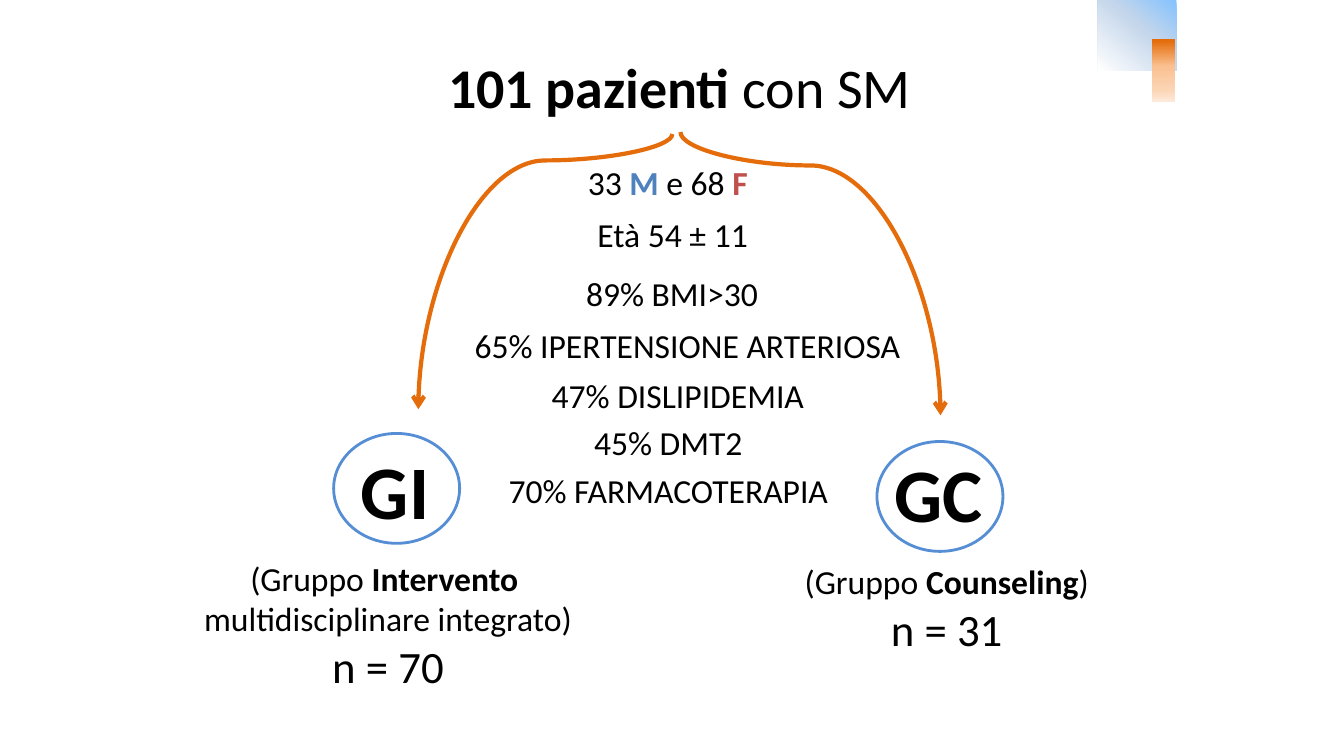
"""Build the slide that splits 101 patients into two study groups."""
from dataclasses import dataclass

import pptx
import pptx.dml.color
import pptx.enum.shapes
import pptx.enum.text
import pptx.oxml
import pptx.oxml.ns
import pptx.util
from pptx.util import Pt

FONT = "Calibri"
BLACK, ORANGE, CIRCLE_BLUE = "000000", "E46C0A", "558ED5"
MALE_BLUE, FEMALE_RED = "4F81BD", "C0504D"
SHAPES = pptx.enum.shapes.MSO_SHAPE


@dataclass
class Run:
    text: str
    bold: bool = False
    color: str = BLACK


@dataclass
class Line:
    runs: list[Run]
    size: float = 24
    indent: float = 0
    space_before: float = 0


@dataclass
class TextBlock:
    left: float
    top: float
    width: float
    height: float
    lines: list[Line]


@dataclass
class GradientPatch:
    left: float
    top: float
    width: float
    height: float
    angle: int
    stops: list[tuple[int, str]]


@dataclass
class Branch:
    start: tuple[float, float]
    end: tuple[float, float]
    bend: float


def fact(left: float, top: float, width: float, *runs: Run) -> TextBlock:
    return TextBlock(left, top, width, 36.72, [Line(list(runs))])


def heading(name: str) -> Line:
    return Line([Run(name, True)], 54, indent=10)


TITLE = TextBlock(305.28, 33.84, 360, 55.44,
                  [Line([Run("101 pazienti ", True), Run("con SM")], 40)])
COUNSELING_GROUP = TextBlock(491.04, 315.36, 348.48, 157.68, [
    heading("GC"),
    Line([Run("(Gruppo "), Run("Counseling", True), Run(")")], indent=22, space_before=17),
    Line([Run("n = 31")], 32, indent=22),
])
INTERVENTION_GROUP = TextBlock(102.96, 313.2, 348.48, 186.48, [
    heading("GI"),
    Line([Run("(Gruppo "), Run("Intervento ", True)], space_before=17),
    Line([Run("multidisciplinare integrato)")]),
    Line([Run("n = 70")], 32),
])
FACTS = [
    fact(401.04, 112.32, 151.92, Run("33 "), Run("M", True, MALE_BLUE),
         Run(" e 68 "), Run("F", True, FEMALE_RED)),
    fact(390.24, 149.04, 185.76, Run("Età 54 ± 11 ")),
    fact(322.56, 191.52, 309.6, Run(" 89% BMI>30")),
    fact(311.04, 228.24, 360, Run("65% IPERTENSIONE ARTERIOSA")),
    fact(354.96, 264.24, 258.48, Run("47% DISLIPIDEMIA")),
    fact(362.16, 298.08, 230.4, Run("45% DMT2")),
    fact(350.64, 331.92, 253.44, Run("70% FARMACOTERAPIA")),
]
CIRCLES = [(626.4, 315.36), (238.32, 309.6)]
PATCHES = [
    GradientPatch(784.08, 0, 56.16, 50.4, 130,
                  [(0, "5E9EFF"), (0, "85C2FF"), (41, "C4D6EB"), (100, "FFFFFF")]),
    GradientPatch(822.96, 28.08, 16.56, 44.64, 90,
                  [(2, ORANGE), (43, "FAC090"), (81, "FCD5B5"), (100, "FDEADA")]),
]
BRANCHES = [
    Branch((480.24, 95.76), (298.8, 292.32), 0.096),
    Branch((486, 94.32), (671.76, 296.64), 0.118),
]


def rgb(color: str) -> pptx.dml.color.RGBColor:
    return pptx.dml.color.RGBColor.from_string(color)


def xml(markup: str):
    return pptx.oxml.parse_xml(markup.replace(">", f" {pptx.oxml.ns.nsdecls('a')}>", 1))


def write_text(shape, block: TextBlock) -> None:
    shape.left, shape.top = Pt(block.left), Pt(block.top)
    shape.width, shape.height = Pt(block.width), Pt(block.height)
    frame = shape.text_frame
    frame.word_wrap = True
    frame.auto_size = pptx.enum.text.MSO_AUTO_SIZE.SHAPE_TO_FIT_TEXT
    frame.vertical_anchor = pptx.enum.text.MSO_ANCHOR.TOP
    for index, line in enumerate(block.lines):
        paragraph = frame.add_paragraph() if index else frame.paragraphs[0]
        paragraph.alignment = pptx.enum.text.PP_ALIGN.CENTER
        if line.space_before:
            paragraph.space_before = Pt(line.space_before)
        if line.indent:
            paragraph._p.get_or_add_pPr().set("marL", str(Pt(line.indent)))
        for part in line.runs:
            run = paragraph.add_run()
            run.text = part.text
            run.font.name, run.font.size = FONT, Pt(line.size)
            run.font.bold = part.bold
            run.font.color.rgb = rgb(part.color)


def add_text(slide, block: TextBlock) -> None:
    shape = slide.shapes.add_textbox(0, 0, Pt(block.width), Pt(block.height))
    write_text(shape, block)


def add_circle(slide, left: float, top: float) -> None:
    shape = slide.shapes.add_shape(SHAPES.OVAL, Pt(left), Pt(top), Pt(90), Pt(78.48))
    shape.shadow.inherit = False
    shape.fill.background()
    shape.line.color.rgb = rgb(CIRCLE_BLUE)
    shape.line.width = Pt(2)


def add_patch(slide, patch: GradientPatch) -> None:
    shape = slide.shapes.add_shape(SHAPES.RECTANGLE, Pt(patch.left), Pt(patch.top),
                                   Pt(patch.width), Pt(patch.height))
    shape.shadow.inherit = False
    shape.line.fill.background()
    stops = "".join(f'<a:gs pos="{place * 1000}"><a:srgbClr val="{color}"/></a:gs>'
                    for place, color in patch.stops)
    geometry = shape._element.spPr.find(pptx.oxml.ns.qn("a:prstGeom"))
    geometry.addnext(xml(f'<a:gradFill rotWithShape="1"><a:gsLst>{stops}</a:gsLst>'
                         f'<a:lin ang="{patch.angle * 60000}" scaled="0"/></a:gradFill>'))


def add_branch(slide, branch: Branch) -> None:
    (start_x, start_y), (end_x, end_y) = branch.start, branch.end
    middle_x, middle_y = (start_x + end_x) / 2, (start_y + end_y) / 2
    half_drop, half_reach = (end_y - start_y) / 2, abs(end_x - start_x) / 2
    side = 1 if end_x < start_x else -1
    connector = slide.shapes.add_connector(
        pptx.enum.shapes.MSO_CONNECTOR.CURVE,
        Pt(middle_x - side * half_drop), Pt(middle_y - half_reach),
        Pt(middle_x + side * half_drop), Pt(middle_y + half_reach))
    connector.line.color.rgb = rgb(ORANGE)
    connector.line.width = Pt(3)
    properties = connector._element.spPr
    properties.xfrm.set("rot", str((90 if side == 1 else 270) * 60000))
    adjustments = properties.find(".//" + pptx.oxml.ns.qn("a:avLst"))
    adjustments.append(xml(f'<a:gd name="adj1" fmla="val {round(branch.bend * 100000)}"></a:gd>'))
    connector.line._get_or_add_ln().append(xml('<a:tailEnd type="arrow"></a:tailEnd>'))
    properties.append(xml("<a:effectLst></a:effectLst>"))


def main() -> None:
    presentation = pptx.Presentation()
    presentation.slide_width, presentation.slide_height = Pt(960), Pt(540)
    slide = presentation.slides.add_slide(presentation.slide_layouts[5])
    write_text(slide.shapes.title, TITLE)
    for block in [COUNSELING_GROUP, INTERVENTION_GROUP, *FACTS]:
        add_text(slide, block)
    for left, top in CIRCLES:
        add_circle(slide, left, top)
    for patch in PATCHES:
        add_patch(slide, patch)
    for branch in BRANCHES:
        add_branch(slide, branch)
    presentation.save("out.pptx")


if __name__ == "__main__":
    main()
